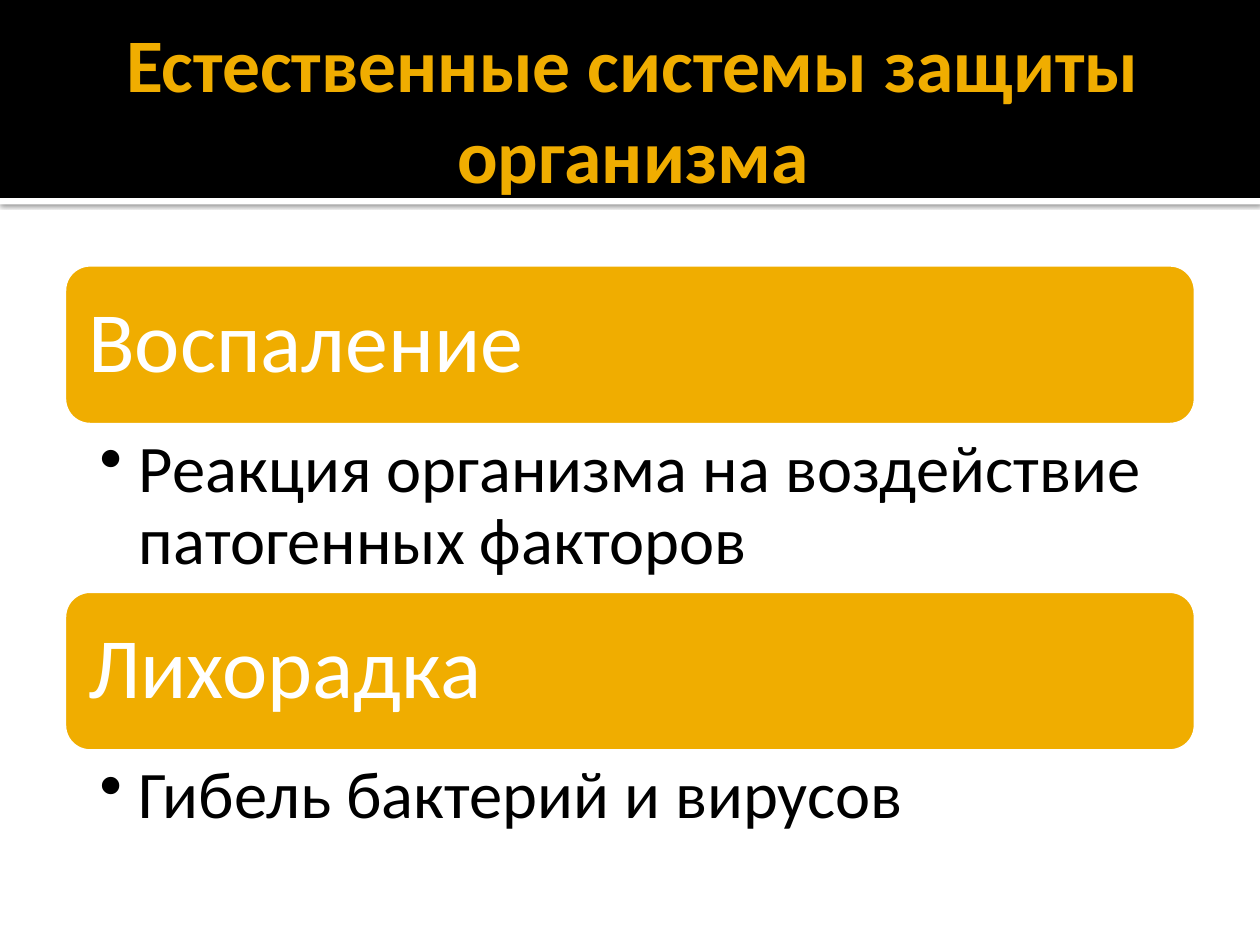
import pptx
import pptx.util
import pptx.dml.color
import pptx.enum.shapes
import pptx.enum.text
import pptx.oxml
import pptx.oxml.ns

Cm, Pt = pptx.util.Cm, pptx.util.Pt
SHAPES = pptx.enum.shapes.MSO_SHAPE
ALIGN = pptx.enum.text.PP_ALIGN
ANCHOR = pptx.enum.text.MSO_ANCHOR

HEADING = "Естественные системы защиты организма"
DEFENCES = [
    ("Воспаление", "Реакция организма на воздействие патогенных факторов", 3.3),
    ("Лихорадка", "Гибель бактерий и вирусов", 2.26),
]
AMBER, WHITE, BLACK = "F0AD00", "FFFFFF", "000000"
SLIDE_WIDTH, BAND_HEIGHT, STRIP_HEIGHT = 25.4, 3.99, 0.13
LEFT, WIDTH, FIRST_TOP, BAR_HEIGHT = 1.27, 22.86, 5.31, 3.28


def rgb(value):
    return pptx.dml.color.RGBColor.from_string(value)


def box(left, top, width, height):
    return Cm(left), Cm(top), Cm(width), Cm(height)


def add_block(slide, kind, place, fill):
    block = slide.shapes.add_shape(kind, *box(*place))
    block.shadow.inherit = False
    block.fill.solid()
    block.fill.fore_color.rgb = rgb(fill)
    block.line.fill.background()
    return block


def write(shape, words, size, color, insets, anchor, align=ALIGN.LEFT, bold=False):
    frame = shape.text_frame
    frame.text = words
    frame.word_wrap = True
    frame.auto_size = pptx.enum.text.MSO_AUTO_SIZE.NONE
    frame.vertical_anchor = anchor
    frame.margin_left, frame.margin_top, frame.margin_right, frame.margin_bottom = map(Cm, insets)
    paragraph = frame.paragraphs[0]
    paragraph.alignment = align
    font = paragraph.runs[0].font
    font.name, font.size, font.bold = "Calibri", Pt(size), bold
    font.color.rgb = rgb(color)
    return paragraph


def add_shadow(shape):
    effects = shape._element.spPr.find(pptx.oxml.ns.qn("a:effectLst"))
    effects.append(pptx.oxml.parse_xml(
        f'<a:outerShdw {pptx.oxml.ns.nsdecls("a")} blurRad="31750" dist="10160" '
        'dir="5400000" algn="tl" rotWithShape="0">'
        f'<a:srgbClr val="{BLACK}"><a:alpha val="60000"/></a:srgbClr></a:outerShdw>'))


def add_bullet(paragraph):
    properties = paragraph._p.get_or_add_pPr()
    properties.set("marL", str(Cm(0.79)))
    properties.set("indent", str(-Cm(0.79)))
    properties.append(pptx.oxml.parse_xml(
        f'<a:buChar {pptx.oxml.ns.nsdecls("a")} char="•"/>'))


def add_header(slide):
    strip = add_block(slide, SHAPES.RECTANGLE, (0, BAND_HEIGHT, SLIDE_WIDTH, STRIP_HEIGHT), WHITE)
    add_shadow(strip)
    add_block(slide, SHAPES.RECTANGLE, (0, 0, SLIDE_WIDTH, BAND_HEIGHT), BLACK)
    title = slide.shapes.title
    title.left, title.top, title.width, title.height = box(LEFT, 0.43, WIDTH, 3.48)
    write(title, HEADING, 43.2, AMBER, (0.25, 0.13, 0.13, 0.13), ANCHOR.MIDDLE, ALIGN.CENTER, True)
    slide.shapes._spTree.append(title._element)


def add_defences(slide):
    top = FIRST_TOP
    for name, effect, effect_height in DEFENCES:
        bar = add_block(slide, SHAPES.ROUNDED_RECTANGLE, (LEFT, top, WIDTH, BAR_HEIGHT), AMBER)
        bar.line.color.rgb = rgb(WHITE)
        bar.line.width = Pt(3.78)
        label = write(bar, name, 49, WHITE, (0.35,) * 4, ANCHOR.MIDDLE)
        label.line_spacing = 0.9
        top += BAR_HEIGHT

        detail = slide.shapes.add_textbox(*box(LEFT, top, WIDTH, effect_height))
        point = write(detail, effect, 38, BLACK, (0.74, 0.18, 0.97, 0.18), ANCHOR.TOP)
        point.level = 1
        point.line_spacing = 0.9
        add_bullet(point)
        top += effect_height


def main():
    deck = pptx.Presentation()
    deck.slide_width, deck.slide_height = Cm(SLIDE_WIDTH), Cm(19.05)
    slide = deck.slides.add_slide(deck.slide_layouts[5])
    add_header(slide)
    add_defences(slide)
    deck.save("out.pptx")


if __name__ == "__main__":
    main()
